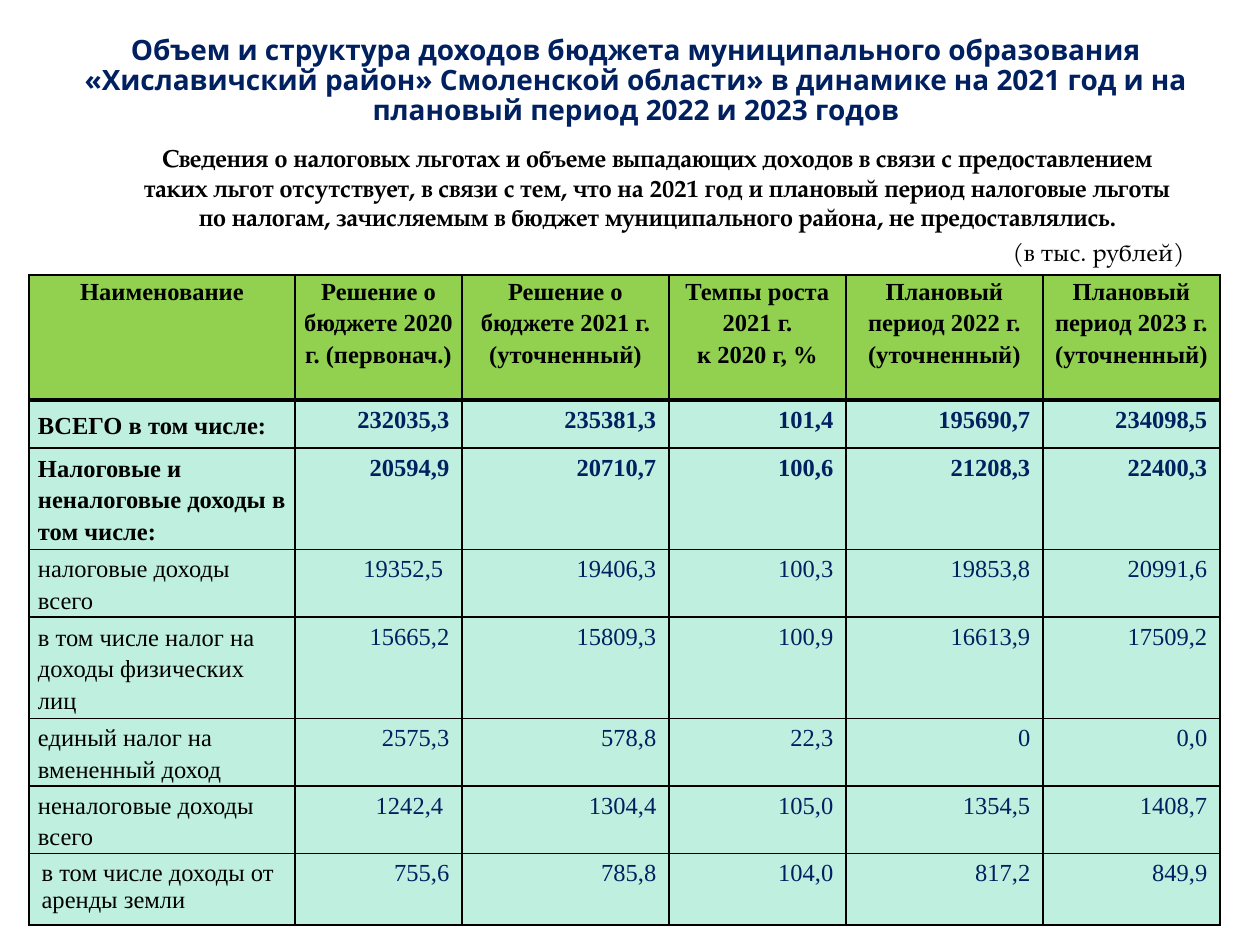
from dataclasses import dataclass

from lxml.etree import SubElement
from pptx import Presentation
from pptx.dml.color import RGBColor
from pptx.enum.text import MSO_ANCHOR as Anchor, PP_ALIGN as Align
from pptx.oxml.ns import qn
from pptx.util import Emu, Pt

PX = 914400 / 126


@dataclass(frozen=True)
class Theme:
    navy: str = "002060"
    black: str = "000000"
    header_fill: str = "92D050"
    body_fill: str = "BFEFDF"
    title_font: str = "Open Sans"
    note_font: str = "TeX Gyre Pagella"
    table_font: str = "Times New Roman"
    title_size: int = 16
    text_size: int = 14


theme = Theme()


def px(length):
    return Emu(round(length * PX))


def format_paragraph(paragraph, font, size, color, bold, align, spacing=None):
    paragraph.alignment = align
    if spacing:
        paragraph.line_spacing = spacing
    for run in paragraph.runs:
        run.font.name = font
        run.font.size = Pt(size)
        run.font.bold = bold
        run.font.color.rgb = RGBColor.from_string(color)


presentation = Presentation()
presentation.slide_width, presentation.slide_height = px(1260), px(945)
slide = presentation.slides.add_slide(presentation.slide_layouts[5])

# Title
title = slide.shapes.title
title.left, title.top, title.width, title.height = px(69), px(20), px(1134), px(106)
title_frame = title.text_frame
title_frame.text = (
    "Объем и структура доходов бюджета муниципального образования "
    "«Хиславичский район» Смоленской области» в динамике на 2021 год и на "
    "плановый период 2022 и 2023 годов"
)
title_frame.vertical_anchor = Anchor.BOTTOM
title_frame.margin_bottom = 0
format_paragraph(title_frame.paragraphs[0], theme.title_font, theme.title_size,
                 theme.navy, True, Align.CENTER, 0.88)

# Note on tax reliefs and the unit of measure
note = slide.shapes.add_textbox(px(108), px(137), px(1089), px(138))
note_frame = note.text_frame
note_frame.word_wrap = True
note_frame.text = (
    "Сведения о налоговых льготах и объеме выпадающих доходов в связи с "
    "предоставлением таких льгот отсутствует, в связи с тем, что на 2021 год и "
    "плановый период налоговые льготы по налогам, зачисляемым в бюджет "
    "муниципального района, не предоставлялись."
)
unit = note_frame.add_paragraph()
unit.text = "(в тыс. рублей)"
unit.space_before = Pt(3)
for paragraph, bold, align in ((note_frame.paragraphs[0], True, Align.CENTER),
                               (unit, False, Align.RIGHT)):
    paragraph._p.get_or_add_pPr().set("marL", str(px(10)))
    format_paragraph(paragraph, theme.note_font, theme.text_size,
                     theme.black, bold, align)

# Budget table
rows = [
    ["Наименование", "Решение о бюджете 2020 г. (первонач.)",
     "Решение о бюджете 2021 г.\n(уточненный)",
     "Темпы роста\n2021 г.\nк 2020 г, %",
     "Плановый период 2022 г.\n(уточненный)",
     "Плановый период 2023 г.\n(уточненный)"],
    ["ВСЕГО в том числе:", "232035,3", "235381,3", "101,4", "195690,7", "234098,5"],
    ["Налоговые и неналоговые доходы в том числе:",
     "20594,9", "20710,7", "100,6", "21208,3", "22400,3"],
    ["налоговые доходы всего", "19352,5 ", "19406,3", "100,3", "19853,8", "20991,6"],
    ["в том числе налог на доходы физических лиц",
     "15665,2", "15809,3", "100,9", "16613,9", "17509,2"],
    ["единый налог на вмененный доход", "2575,3", "578,8", "22,3", "0", "0,0"],
    ["неналоговые доходы всего", "1242,4 ", "1304,4", "105,0", "1354,5", "1408,7"],
    ["в том числе доходы от аренды земли", "755,6", "785,8", "104,0", "817,2", "849,9"],
]
column_widths = [266, 167, 207, 177, 197, 177]
row_heights = [125, 48, 93, 62, 94, 62, 62, 67]
last_row = len(rows) - 1

table = slide.shapes.add_table(len(rows), len(column_widths), px(29), px(275),
                               px(sum(column_widths)), px(sum(row_heights))).table
for column, width in zip(table.columns, column_widths):
    column.width = px(width)
for row, height in zip(table.rows, row_heights):
    row.height = px(height)

for row_index, values in enumerate(rows):
    is_header = row_index == 0
    for column_index, value in enumerate(values):
        cell = table.cell(row_index, column_index)
        cell.text = value
        is_name = column_index == 0 and not is_header

        # Borders, with a thick rule under the header
        properties = cell._tc.get_or_add_tcPr()
        thick_side = {0: "lnB", 1: "lnT"}.get(row_index)
        for side in ("lnL", "lnR", "lnT", "lnB"):
            width = Pt(3 if side == thick_side else 1)
            line = SubElement(properties, qn(f"a:{side}"), w=str(width))
            fill = SubElement(line, qn("a:solidFill"))
            SubElement(fill, qn("a:srgbClr"), val=theme.black)
        cell.fill.solid()
        cell.fill.fore_color.rgb = RGBColor.from_string(
            theme.header_fill if is_header else theme.body_fill)

        # Header and row names sit tight; figures keep the default margins
        is_tight = is_header or (is_name and row_index != last_row)
        if is_tight:
            cell.margin_left = cell.margin_right = px(9)
            cell.margin_top = cell.margin_bottom = 0
        if is_tight and is_name:
            cell.vertical_anchor = Anchor.MIDDLE

        align = Align.CENTER if is_header else Align.LEFT if is_name else Align.RIGHT
        color = theme.black if is_header or is_name else theme.navy
        for paragraph in cell.text_frame.paragraphs:
            format_paragraph(paragraph, theme.table_font, theme.text_size, color,
                             row_index <= 2, align, 1.15 if is_tight else None)

presentation.save("out.pptx")
